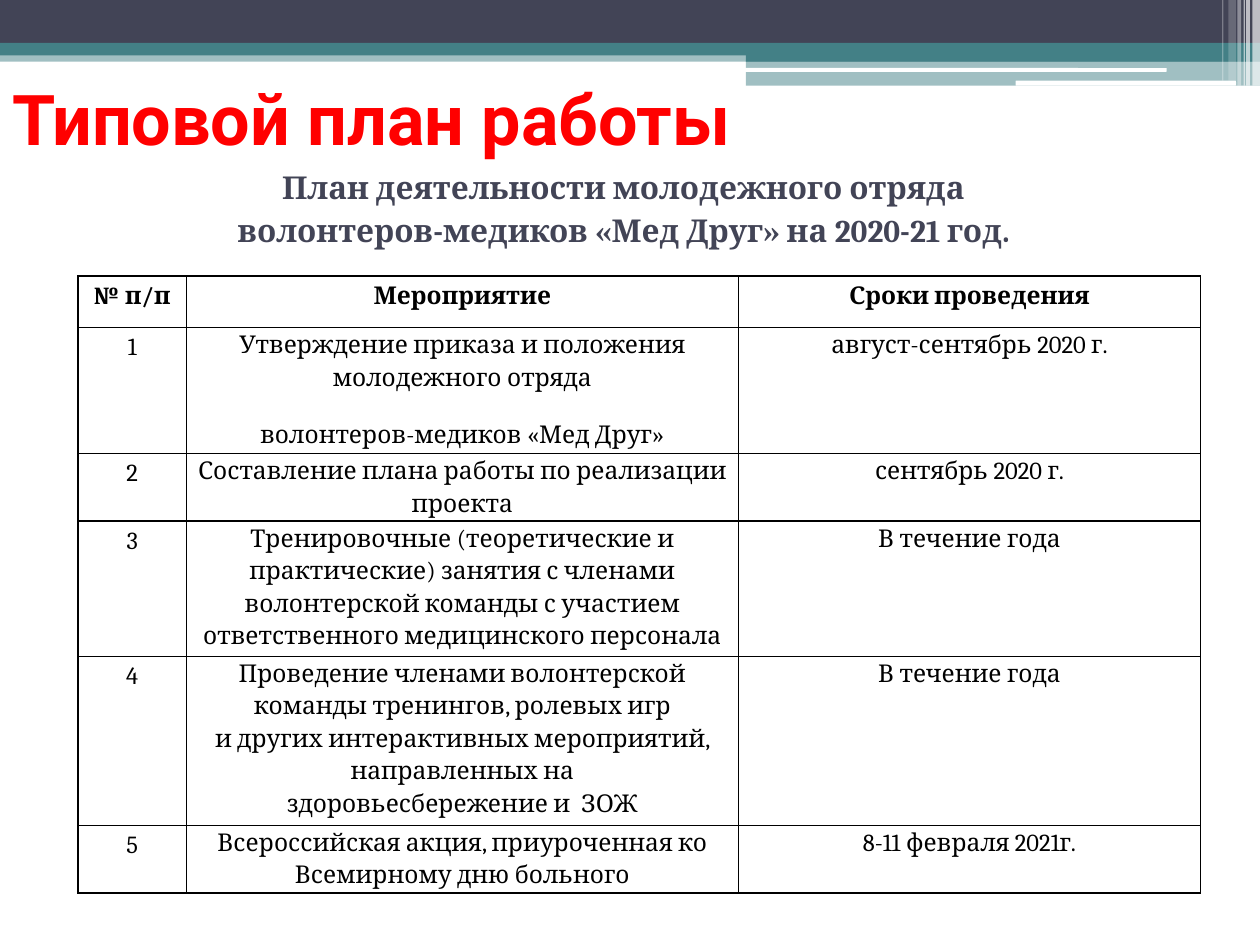
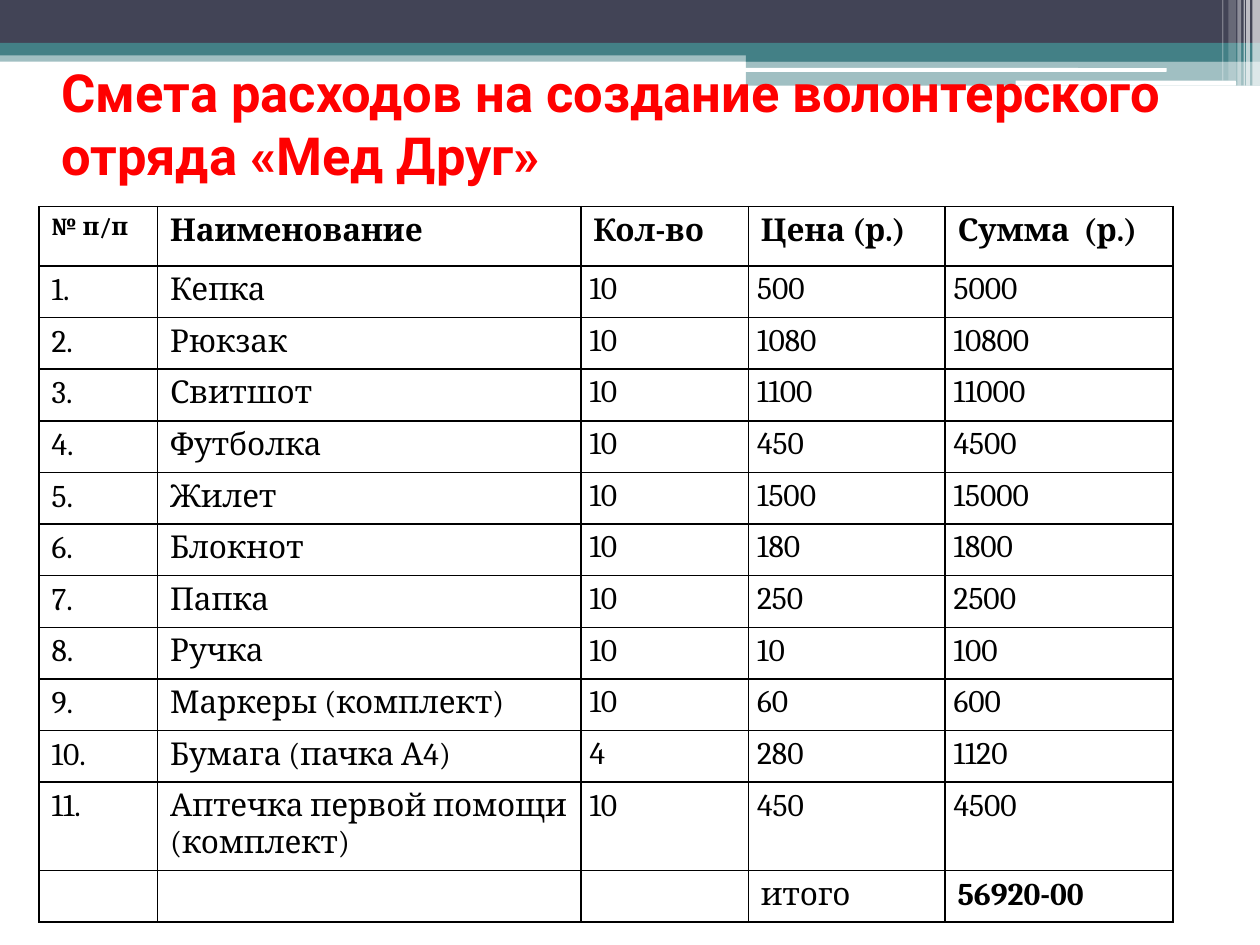
from copy import deepcopy

from lxml.etree import SubElement
from pptx import Presentation
from pptx.dml.color import RGBColor
from pptx.enum.shapes import MSO_SHAPE
from pptx.enum.text import MSO_ANCHOR, PP_ALIGN
from pptx.oxml.ns import qn
from pptx.util import Inches, Pt

COLORS = {"navy": "424456", "teal": "438086", "white": "FFFFFF",
          "red": "FF0000", "black": "000000"}
HEAD_FONT, BODY_FONT = "Roboto", "Cambria"
LEFT, CENTER = PP_ALIGN.LEFT, PP_ALIGN.CENTER

# left, top, width, height, color, opacity in percent
BANDS = [
    (0, 0.4, 10, 0.09, "teal", 50),
    (0, 0, 10, 0.34, "navy", 100),
    (0, 0.34, 10, 0.1, "teal", 100),
    (5.92, 0.39, 4.08, 0.1, "teal", 100),
    (5.92, 0.48, 4.08, 0.2, "teal", 50),
]
PILLS = [(5.91, 0.54, 3.35, 0.03), (8.06, 0.64, 1.75, 0.04)]
# left, width, height, opacity in percent
STRIPES = [(9.94, 0.06, 0.68, 65), (9.89, 0.03, 0.68, 65),
           (9.87, 0.01, 0.68, 60), (9.82, 0.03, 0.68, 40),
           (9.75, 0.06, 0.64, 20), (9.7, 0.01, 0.64, 30)]

PLAN = [
    ("№ п/п", "Мероприятие", "Сроки проведения"),
    ("1", ["Утверждение приказа и положения молодежного отряда",
           "волонтеров-медиков «Мед Друг»"], "август-сентябрь 2020 г."),
    ("2", "Составление плана работы по реализации проекта",
     "сентябрь 2020 г."),
    ("3", "Тренировочные (теоретические и практические) занятия с членами\n"
          "волонтерской команды с участием ответственного медицинского "
          "персонала", "В течение года"),
    ("4", "Проведение членами волонтерской команды тренингов, ролевых игр\n"
          "и других интерактивных мероприятий, направленных на\n"
          "здоровьесбережение и  ЗОЖ", "В течение года"),
    ("5", "Всероссийская акция, приуроченная ко Всемирному дню больного",
     "8-11 февраля 2021г."),
]
BUDGET_HEAD = ("№ п/п", "Наименование", "Кол-во", "Цена (р.)", "Сумма  (р.)")
GOODS = [
    ("Кепка", "10", "500", "5000"),
    ("Рюкзак", "10", "1080", "10800"),
    ("Свитшот", "10", "1100", "11000"),
    ("Футболка", "10", "450", "4500"),
    ("Жилет", "10", "1500", "15000"),
    ("Блокнот", "10", "180", "1800"),
    ("Папка", "10", "250", "2500"),
    ("Ручка", "10", "10", "100"),
    ("Маркеры (комплект)", "10", "60", "600"),
    ("Бумага (пачка А4)", "4", "280", "1120"),
    ("Аптечка первой помощи (комплект)", "10", "450", "4500"),
]
TOTAL = ("", "", "", "итого", "56920-00")


def rgb(name):
    return RGBColor.from_string(COLORS[name])


def write(frame, text, size=18, font=BODY_FONT, color="black", bold=False,
          align=LEFT, line=None, before=0, hang=None):
    """Fill a text frame; text is a string or a list of paragraphs."""
    for i, words in enumerate([text] if isinstance(text, str) else text):
        para = frame.add_paragraph() if i else frame.paragraphs[0]
        para.text = words.replace("\n", "\v")
        para.alignment = align
        if line:
            para.line_spacing = line
        if i and before:
            para.space_before = Pt(before)
        if hang:
            props = para._p.get_or_add_pPr()
            props.set("marL", str(Inches(hang[0])))
            props.set("indent", str(Inches(hang[1])))
        for run in para.runs:
            run.font.name, run.font.size = font, Pt(size)
            run.font.bold = bold
            run.font.color.rgb = rgb(color)
        for gap in para._p.findall(qn("a:br")):
            gap.append(deepcopy(para.runs[0]._r.rPr))


def add_text(slide, box, text, anchor=MSO_ANCHOR.TOP, top=0.05, **style):
    frame = slide.shapes.add_textbox(*map(Inches, box)).text_frame
    frame.word_wrap = True
    frame.vertical_anchor = anchor
    frame.margin_top = Inches(top)
    write(frame, text, **style)


def add_title(slide, box, text, size):
    add_text(slide, box, text, anchor=MSO_ANCHOR.MIDDLE, size=size,
             font=HEAD_FONT, color="red", bold=True)


def add_block(slide, box, color, alpha=100, kind=MSO_SHAPE.RECTANGLE):
    block = slide.shapes.add_shape(kind, *map(Inches, box))
    block.shadow.inherit = False
    block.line.fill.background()
    block.fill.solid()
    block.fill.fore_color.rgb = rgb(color)
    if alpha < 100:
        tint = block.fill._xPr.find(".//" + qn("a:srgbClr"))
        SubElement(tint, qn("a:alpha"), val=str(alpha * 1000))


def add_frame(deck):
    """Add a blank slide with the shared top bands."""
    slide = deck.slides.add_slide(deck.slide_layouts[6])
    for *box, color, alpha in BANDS:
        add_block(slide, box, color, alpha)
    for box in PILLS:
        add_block(slide, box, "white", kind=MSO_SHAPE.ROUNDED_RECTANGLE)
    for left, width, height, alpha in STRIPES:
        add_block(slide, (left, 0, width, height), "white", alpha)
    return slide


def add_edges(cell):
    props = cell._tc.get_or_add_tcPr()
    for side in "LRTB":
        edge = SubElement(props, qn("a:ln" + side), w=str(Pt(1)))
        paint = SubElement(edge, qn("a:solidFill"))
        SubElement(paint, qn("a:srgbClr"), val=COLORS["black"])


def add_grid(slide, spot, cols, rows, data, style, fill=None):
    """Add a table; style(row, col) gives (tight, text format) of a cell."""
    size = (sum(cols), sum(rows))
    table = slide.shapes.add_table(len(rows), len(cols),
                                   *map(Inches, spot + size)).table
    table.first_row = table.horz_banding = False
    for col, width in zip(table.columns, cols):
        col.width = Inches(width)
    for row, height in zip(table.rows, rows):
        row.height = Inches(height)
    for r, line in enumerate(data):
        for c, text in enumerate(line):
            cell = table.cell(r, c)
            tight, form = style(r, c)
            if tight:
                cell.margin_left = cell.margin_right = Inches(0.07)
                cell.margin_top = cell.margin_bottom = 0
                form = {**form, "line": 1.15, "before": 14}
            add_edges(cell)
            if fill:
                cell.fill.solid()
                cell.fill.fore_color.rgb = rgb(fill)
            else:
                cell.fill.background()
            write(cell.text_frame, text, **form)


def plan_style(row, col):
    return row and col, {"size": 14, "bold": row == 0, "align": CENTER}


def budget_style(row, col):
    last = len(GOODS) + 1
    bold = row == 0 or (row == last and col == 4)
    small = row == 0 and col == 0
    size = 14 if small else 18
    return 0 < row < last and col > 1, {"size": size, "bold": bold}


def add_plan(deck):
    slide = add_frame(deck)
    add_title(slide, (0, 0.47, 9, 0.93), "Типовой план работы", 40)
    add_text(slide, (0.39, 1.25, 9, 6.25),
             ["План деятельности молодежного отряда",
              "волонтеров-медиков «Мед Друг» на 2020-21 год."],
             top=0.08, color="navy", bold=True, align=CENTER, before=3,
             hang=(0.4, -0.28))
    add_grid(slide, (0.62, 2.19), (0.86, 4.38, 3.67),
             (0.41, 0.97, 0.52, 1.03, 1.29, 0.53), PLAN, plan_style)


def add_budget(deck):
    slide = add_frame(deck)
    add_title(slide, (0.39, 0.55, 9, 0.86),
              "Смета расходов на создание волонтерского отряда «Мед Друг»",
              30)
    items = [(f"{i}.", *good) for i, good in enumerate(GOODS, 1)]
    rows = [0.47] + [0.41] * (len(GOODS) - 1) + [0.68, 0.41]
    add_grid(slide, (0.31, 1.64), (0.94, 3.36, 1.33, 1.56, 1.81), rows,
             [BUDGET_HEAD, *items, TOTAL], budget_style, fill="white")


def main():
    deck = Presentation()
    deck.slide_width, deck.slide_height = Inches(10), Inches(7.5)
    add_plan(deck)
    add_budget(deck)
    deck.save("out.pptx")


if __name__ == "__main__":
    main()
